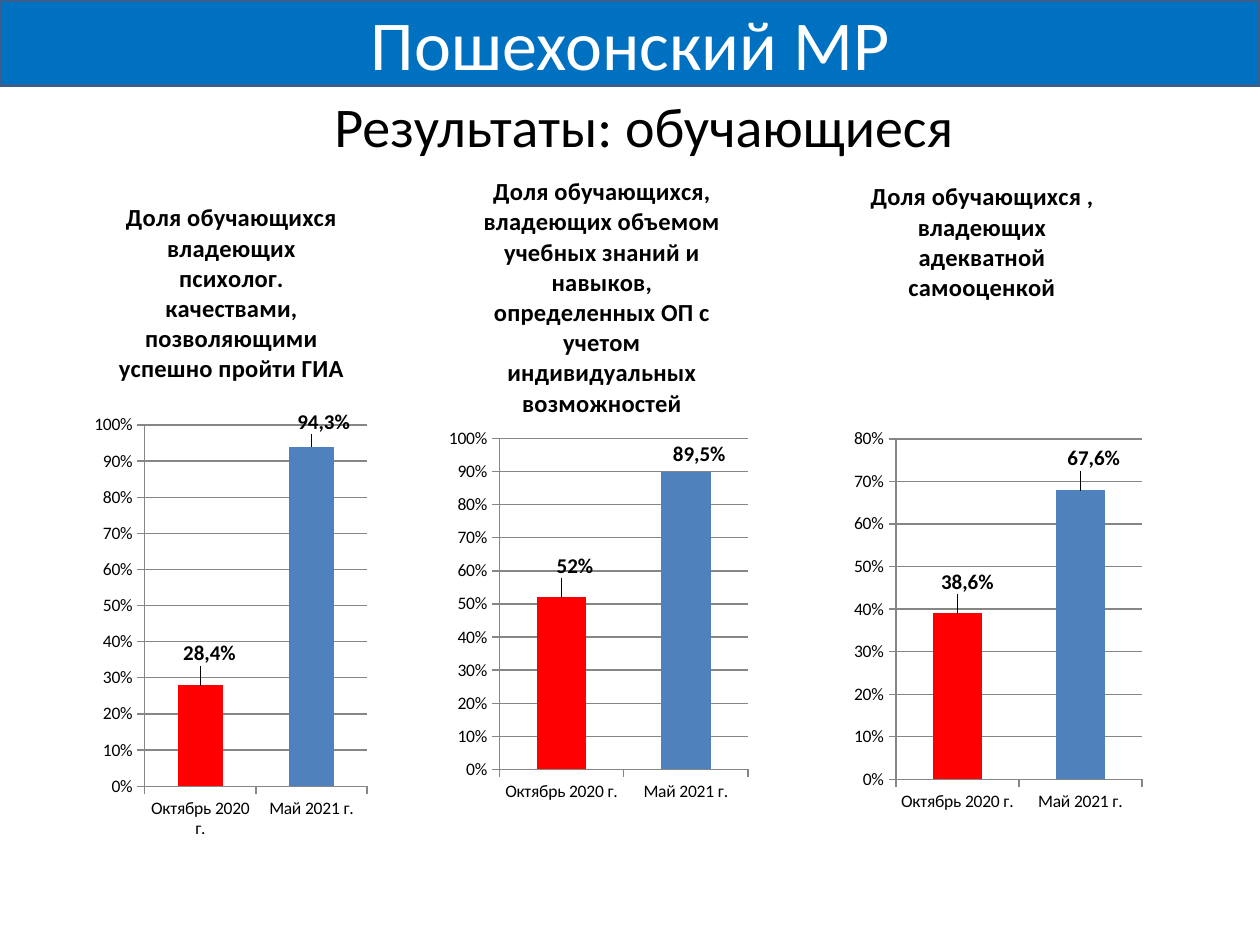
from pptx import Presentation
from pptx.chart.data import CategoryChartData
from pptx.dml.color import RGBColor
from pptx.enum.chart import XL_CHART_TYPE as ChartType, XL_LABEL_POSITION as LabelPos
from pptx.enum.chart import XL_TICK_MARK as Tick
from pptx.enum.text import MSO_ANCHOR, MSO_AUTO_SIZE as AutoSize, PP_ALIGN
from pptx.oxml import parse_xml
from pptx.oxml.ns import nsdecls, qn
from pptx.util import Pt

FONT = "Calibri"
BLACK, WHITE, GRAY = "000000", "FFFFFF", "868686"
PERIODS = ["Октябрь 2020 г.", "Май 2021 г."]

# Box in points; layouts are fractions of the chart; each label has an (x, y) shift
CHARTS = [
    dict(box=(48, 100, 174, 397), title_at=(0.1, 0.03),
         title="Доля обучающихся владеющих психолог. качествами, позволяющими успешно пройти ГИА",
         plot=(0.2, 0.36, 0.73, 0.52), shares=(0.28, 0.94), top=None,
         labels=("28,4%", "94,3%"), shifts=((0.03, -0.02), (0.04, -0.01))),
    dict(box=(247, 97, 192, 394), title_at=(0.14, 0),
         title="Доля обучающихся, владеющих объемом учебных знаний и навыков, "
               "определенных ОП с учетом индивидуальных возможностей",
         plot=(0.2, 0.39, 0.74, 0.48), shares=(0.52, 0.9), top=1,
         labels=("52%", "89,5%"), shifts=((0.04, -0.02), (0.04, 0))),
    dict(box=(474, 100, 190, 397), title_at=(0.11, 0),
         title="Доля обучающихся , владеющих адекватной самооценкой",
         plot=(0.2, 0.38, 0.74, 0.49), shares=(0.39, 0.68), top=None,
         labels=("38,6%", "67,6%"), shifts=((0.03, -0.02), (0.04, -0.02))),
]


def rgb(value):
    return RGBColor.from_string(value)


def style_font(font, size, color=BLACK, bold=False):
    font.name, font.size, font.bold = FONT, Pt(size), bold
    font.color.rgb = rgb(color)


def set_layout(parent, index, x, y, size=None, edge=True):
    """Give a chart part a manual layout as its child number index."""
    for old in parent.findall(qn("c:layout")):
        parent.remove(old)
    settings = []
    if size:
        settings.append(("layoutTarget", "inner"))
    if edge:
        settings += [("xMode", "edge"), ("yMode", "edge")]
    settings += [("x", x), ("y", y)]
    if size:
        settings += [("w", size[0]), ("h", size[1])]
    inner = "".join(f'<c:{tag} val="{value}"/>' for tag, value in settings)
    parent.insert(index, parse_xml(
        f'<c:layout {nsdecls("c")}><c:manualLayout>{inner}</c:manualLayout></c:layout>'))


def format_banner(banner, left, top, width, height):
    banner.left, banner.top, banner.width, banner.height = map(Pt, (left, top, width, height))
    banner.fill.solid()
    banner.fill.fore_color.rgb = rgb("0070C0")
    banner.line.color.rgb = rgb("3A5F8C")
    banner.line.width = Pt(2)
    frame = banner.text_frame
    frame.text = "Пошехонский МР"
    frame.auto_size = AutoSize.NONE
    frame.vertical_anchor = MSO_ANCHOR.MIDDLE
    paragraph = frame.paragraphs[0]
    paragraph.alignment = PP_ALIGN.CENTER
    style_font(paragraph.font, 40, WHITE)


def add_subtitle(slide, left, top, width, height):
    subtitle = slide.shapes.add_textbox(*map(Pt, (left, top, width, height)))
    frame = subtitle.text_frame
    frame.word_wrap = True
    frame.auto_size = AutoSize.SHAPE_TO_FIT_TEXT
    frame.text = "Результаты: обучающиеся"
    style_font(frame.paragraphs[0].font, 32)


def format_axes(chart, top):
    for axis in (chart.category_axis, chart.value_axis):
        axis.major_tick_mark, axis.minor_tick_mark = Tick.OUTSIDE, Tick.NONE
        axis.format.line.color.rgb = rgb(GRAY)
        style_font(axis.tick_labels.font, 10)
    shares_axis = chart.value_axis
    shares_axis.has_major_gridlines = True
    shares_axis.major_gridlines.format.line.color.rgb = rgb(GRAY)
    shares_axis.tick_labels.number_format = "0%"
    shares_axis.tick_labels.number_format_is_linked = False
    if top:
        shares_axis.maximum_scale = top


def add_share_chart(slide, box, title, title_at, plot, shares, top, labels, shifts):
    data = CategoryChartData(number_format="0%")
    data.categories = PERIODS
    data.add_series("Series 1", shares)
    chart = slide.shapes.add_chart(ChartType.COLUMN_CLUSTERED, *map(Pt, box), data).chart
    style_font(chart.font, 10)
    chart.has_legend = False

    # Heading
    chart.has_title = True
    heading = chart.chart_title
    heading.text_frame.text = title
    style_font(heading.text_frame.paragraphs[0].font, 14, bold=True)
    heading.include_in_layout = False
    set_layout(heading._element, 1, *title_at)

    # Plot area and axes
    plot_area = chart._chartSpace.chart.plotArea
    set_layout(plot_area, 0, *plot[:2], size=plot[2:])
    format_axes(chart, top)

    # Columns: the first period is red
    columns = chart.plots[0]
    columns.gap_width, columns.vary_by_categories = 150, False
    series = columns.series[0]
    series.invert_if_negative = False
    series.format.fill.solid()
    series.format.fill.fore_color.rgb = rgb("4F81BD")
    first = series.points[0].format.fill
    first.solid()
    first.fore_color.rgb = rgb("FF0000")

    # Shifted labels; their bold shows only when it is set on the run
    for index, (text, shift) in enumerate(zip(labels, shifts)):
        label = series.points[index].data_label
        label.text_frame.text = text
        style_font(label.text_frame.paragraphs[0].runs[0].font, 12, bold=True)
        label.position = LabelPos.OUTSIDE_END
        set_layout(label._dLbl, 1, *shift, edge=False)


def main():
    deck = Presentation()
    deck.slide_width, deck.slide_height = Pt(720), Pt(540)
    slide = deck.slides.add_slide(deck.slide_layouts[5])
    format_banner(slide.shapes.title, 0, 0, 720, 49)
    add_subtitle(slide, 184, 49, 391, 46)
    for chart in CHARTS:
        add_share_chart(slide, **chart)
    deck.save("out.pptx")


if __name__ == "__main__":
    main()
